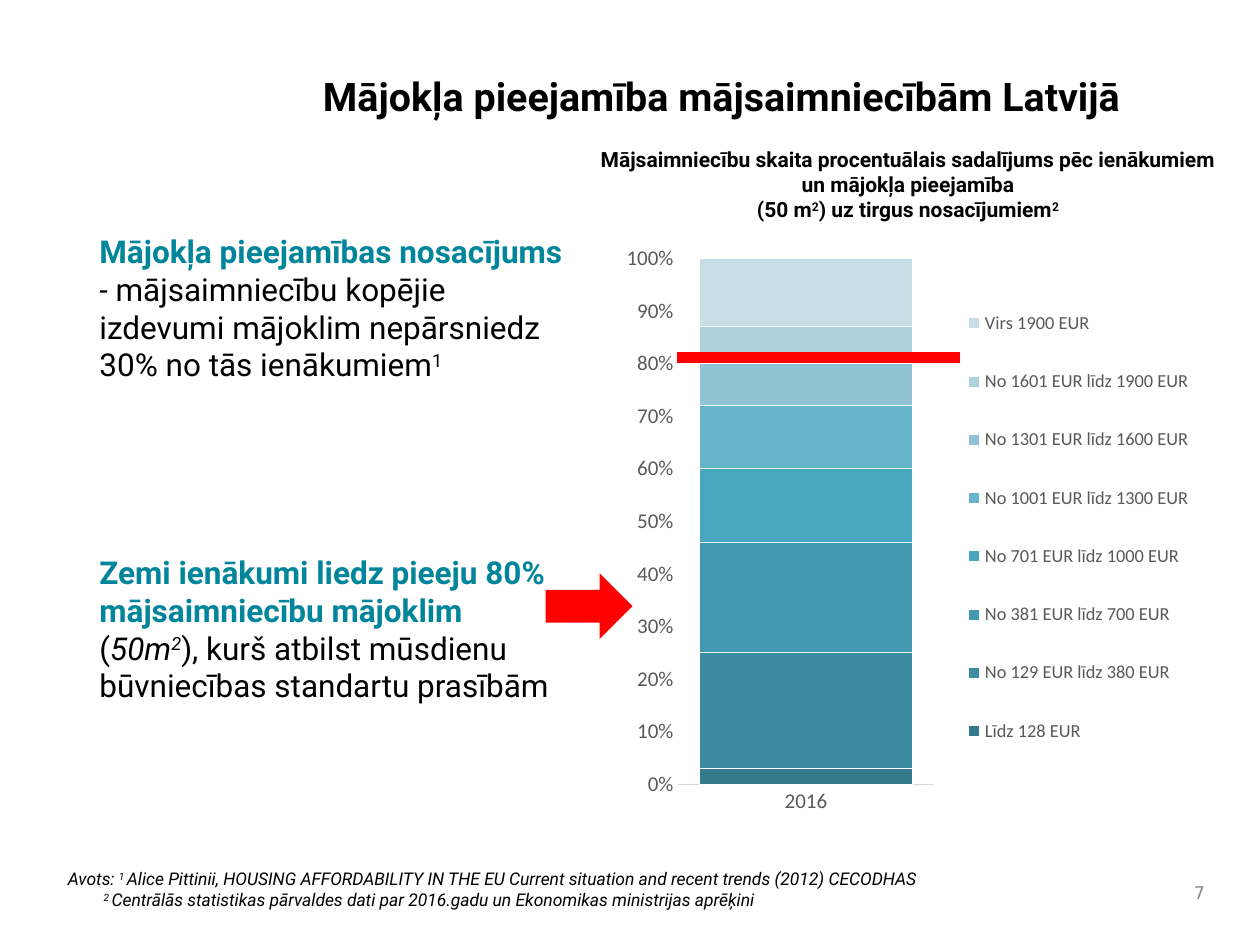
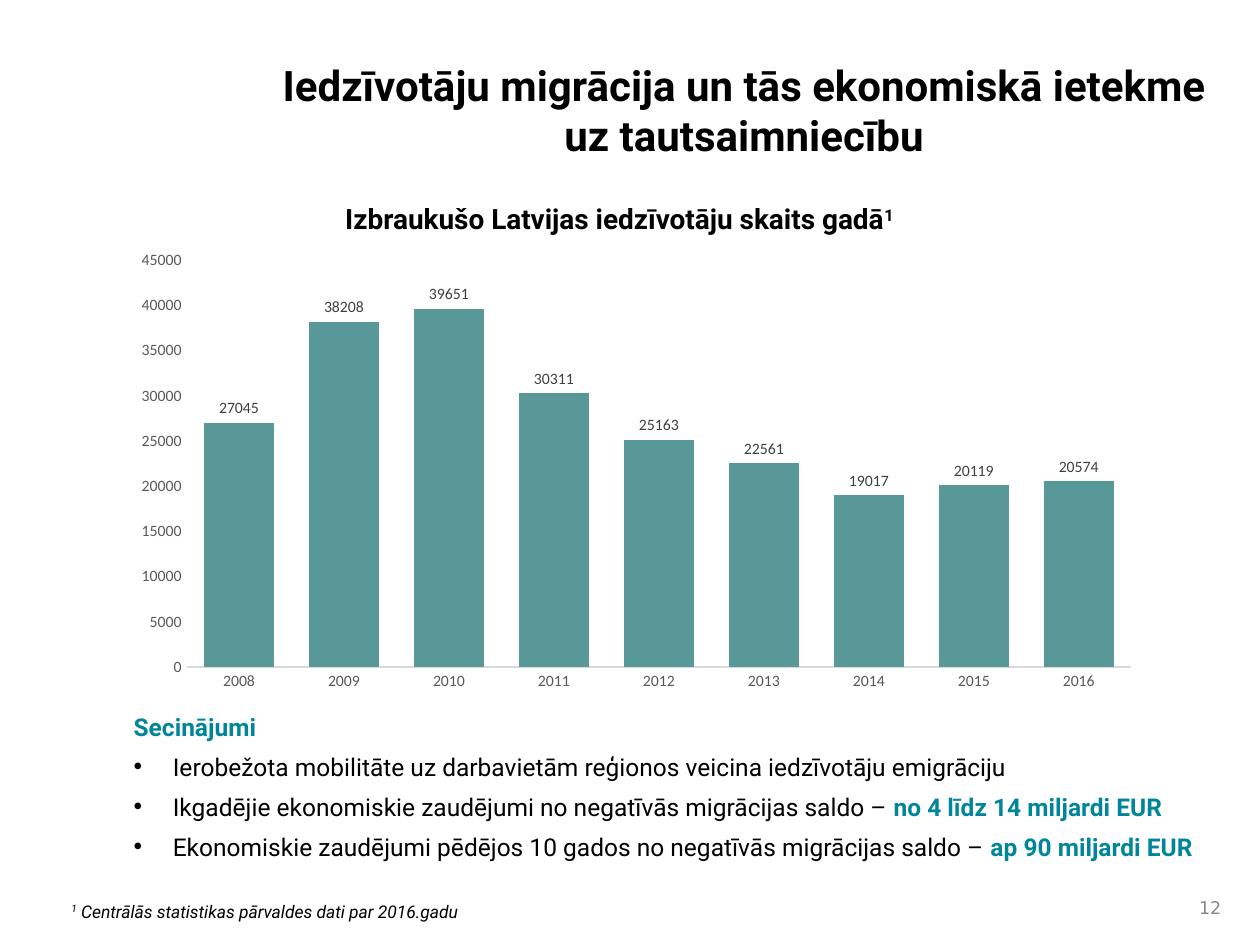
from dataclasses import dataclass

from lxml import etree
from pptx import Presentation
from pptx import util as u
from pptx.chart.data import CategoryChartData
from pptx.dml.color import RGBColor
from pptx.enum import chart as charts, shapes, text
from pptx.oxml.ns import qn


@dataclass(frozen=True)
class Theme:
    """Colours, fonts and type sizes shared by the slides."""
    ink: str = "000000"
    accent: str = "00859B"
    alert: str = "FF0000"
    paper: str = "FFFFFF"
    muted: str = "898989"
    axis_text: str = "595959"
    axis_line: str = "D9D9D9"
    label: str = "404040"
    column: str = "589898"
    income: tuple = ("357A8C", "3C8BA0", "4399B0", "48A6BF",
                     "68B4CB", "92C3D5", "AED1DE", "C7DEE7")
    font: str = "Roboto"
    chart_font: str = "Calibri"
    number_font: str = "DejaVu Sans"
    note_size: float = 10
    body_size: float = 18
    list_size: float = 14


@dataclass(frozen=True)
class Box:
    """A rectangle in centimetres."""
    left: float
    top: float
    width: float
    height: float

    def inset(self, left, top, width, height):
        """Return a box placed relative to this one."""
        return Box(self.left + left, self.top + top, width, height)

    def lengths(self):
        """Return the four measures as slide lengths."""
        return [u.Cm(n) for n in (self.left, self.top, self.width, self.height)]


THEME = Theme()
ALIGN = text.PP_ALIGN
STRONG = dict(bold=True, color=THEME.accent)
RAISED = dict(raised=True)


def rgb(color):
    """Turn a hex string into a colour."""
    return RGBColor.from_string(color)


def style_font(font, size, color, name):
    """Set the size, colour and face of a font."""
    font.size, font.name = u.Pt(size), name
    font.color.rgb = rgb(color)


def add_span(para, words, size=THEME.note_size, color=THEME.ink, name=THEME.font,
             bold=False, italic=False, raised=False):
    """Add one formatted run to a paragraph."""
    span = para.add_run()
    span.text = words
    style_font(span.font, size, color, name)
    span.font.bold, span.font.italic = bold, italic
    if raised:
        span.font._element.set("baseline", "30000")


def add_para(frame, spans, align=ALIGN.LEFT, before=0, indent=0, bullet=None, **base):
    """Add a paragraph of plain strings and (string, format) pairs."""
    first = frame.paragraphs[0]
    para = frame.add_paragraph() if first.runs else first
    props = para._p.get_or_add_pPr()
    props.set("marL", str(u.Cm(indent)))
    props.set("indent", str(-u.Cm(indent) if bullet else 0))
    mark = etree.SubElement(props, qn("a:buChar" if bullet else "a:buNone"))
    if bullet:
        mark.set("char", bullet)
    para.alignment, para.space_before = align, u.Pt(before)
    for span in spans:
        words, extra = (span, {}) if isinstance(span, str) else span
        add_span(para, words, **{**base, **extra})


def prepare(shape, box, anchor=text.MSO_ANCHOR.TOP):
    """Move a text shape into a box and return its wrapped frame."""
    shape.left, shape.top, shape.width, shape.height = box.lengths()
    frame = shape.text_frame
    frame.word_wrap, frame.auto_size = True, text.MSO_AUTO_SIZE.NONE
    frame.vertical_anchor = anchor
    return frame


def add_frame(page, box, anchor=text.MSO_ANCHOR.TOP):
    """Add a text box and return its frame."""
    return prepare(page.shapes.add_textbox(*box.lengths()), box, anchor)


def start_page(deck, title, size, title_box, number, number_box):
    """Add a slide with its title and page number."""
    page = deck.slides.add_slide(deck.slide_layouts[1])
    add_para(prepare(page.shapes.title, title_box), [title],
             align=ALIGN.CENTER, size=size, bold=True)
    add_para(add_frame(page, number_box, text.MSO_ANCHOR.MIDDLE), [number],
             align=ALIGN.RIGHT, color=THEME.muted, name=THEME.number_font)
    return page


def add_bar_chart(page, box, kind, categories, series, size, gap, overlap):
    """Add a column chart with plain axes and return it."""
    data = CategoryChartData()
    data.categories = categories
    for name, values in series:
        data.add_series(name, values)
    chart = page.shapes.add_chart(kind, *box.lengths(), data).chart
    chart.has_title = chart.has_legend = False
    style_font(chart.font, size, THEME.axis_text, THEME.chart_font)
    for axis in (chart.category_axis, chart.value_axis):
        axis.has_major_gridlines = False
        axis.major_tick_mark = axis.minor_tick_mark = charts.XL_TICK_MARK.NONE
        style_font(axis.tick_labels.font, size, THEME.axis_text, THEME.chart_font)
    chart.category_axis.format.line.color.rgb = rgb(THEME.axis_line)
    chart.category_axis.format.line.width = u.Pt(0.75)
    chart.value_axis.format.line.fill.background()
    plot = chart.plots[0]
    plot.gap_width, plot.overlap, plot.vary_by_categories = gap, overlap, False
    return chart


def set_layout(parent, position, inner=False, **measures):
    """Fix a chart region at fractions of the chart area."""
    for old in parent.findall(qn("c:layout")):
        parent.remove(old)
    layout = etree.Element(qn("c:layout"))
    manual = etree.SubElement(layout, qn("c:manualLayout"))
    settings = {"layoutTarget": "inner"} if inner else {}
    settings |= {"xMode": "edge", "yMode": "edge", **measures}
    for name, value in settings.items():
        etree.SubElement(manual, qn(f"c:{name}")).set("val", str(value))
    parent.insert(position, layout)


def income_chart(page, box):
    """Draw the stacked income shares with their legend."""
    shares = [("Līdz 128 EUR", 3), ("No 129 EUR līdz 380 EUR", 22),
              ("No 381 EUR līdz 700 EUR", 21), ("No 701 EUR līdz 1000 EUR", 14),
              ("No 1001 EUR līdz 1300 EUR", 12), ("No 1301 EUR līdz 1600 EUR", 8),
              ("No 1601 EUR līdz 1900 EUR", 7), ("Virs 1900 EUR", 13)]
    chart = add_bar_chart(page, box, charts.XL_CHART_TYPE.COLUMN_STACKED_100, ["2016"],
                          [(name, [share]) for name, share in shares], 12, 20, 100)
    labels = chart.value_axis.tick_labels
    labels.number_format, labels.number_format_is_linked = "0%", False
    for series, color in zip(chart.plots[0].series, THEME.income):
        series.format.fill.solid()
        series.format.fill.fore_color.rgb = rgb(color)
        series.format.line.color.rgb = rgb(THEME.paper)
        series.format.line.width = u.Pt(0.75)
    chart.has_legend = True
    chart.legend.position = charts.XL_LEGEND_POSITION.RIGHT
    chart.legend.include_in_layout = False
    style_font(chart.legend.font, 10.5, THEME.axis_text, THEME.chart_font)
    set_layout(chart.element.xpath("c:chart/c:plotArea")[0], 0, inner=True,
               x=0.09, y=0.04, w=0.43, h=0.87)
    set_layout(chart.element.xpath("c:chart/c:legend")[0], 1,
               x=0.56, y=0.07, w=0.41, h=0.83)


def income_panel(page, box):
    """Place the heading, chart, threshold line and arrow."""
    heading = add_frame(page, box.inset(0.61, 0, 13.39, 2.51))
    look = dict(align=ALIGN.CENTER, size=12, bold=True)
    add_para(heading, ["Mājsaimniecību skaita procentuālais sadalījums pēc "
                       "ienākumiem un mājokļa pieejamība"], **look)
    add_para(heading, ["(50 m", ("2", RAISED), ") uz tirgus nosacījumiem",
                       ("2", RAISED)], **look)
    income_chart(page, box.inset(1.6, 1.9, 11.96, 12.19))

    left, top = u.Cm(box.left + 2.64), u.Cm(box.top + 4.39)
    threshold = page.shapes.add_connector(shapes.MSO_CONNECTOR.STRAIGHT,
                                          left, top, left + u.Cm(5.72), top)
    threshold.line.color.rgb = rgb(THEME.alert)
    threshold.line.width = u.Pt(6.5)
    etree.SubElement(threshold._element.spPr, qn("a:effectLst"))

    arrow = page.shapes.add_shape(shapes.MSO_SHAPE.RIGHT_ARROW,
                                  *box.inset(0, 8.74, 1.75, 1.32).lengths())
    arrow.shadow.inherit = False
    arrow.fill.solid()
    arrow.fill.fore_color.rgb = rgb(THEME.alert)
    arrow.line.fill.background()


def affordability_text(page, box):
    """Fill the body with the affordability condition and finding."""
    frame = prepare(page.placeholders[1], box)
    add_para(frame, [("Mājokļa pieejamības nosacījums ", STRONG),
                     ("- ", dict(italic=True)),
                     "mājsaimniecību kopējie izdevumi mājoklim nepārsniedz "
                     "30% no tās ienākumiem", ("1", RAISED)], size=THEME.body_size)
    add_para(frame, [("Zemi ienākumi liedz pieeju 80% mājsaimniecību mājoklim ", STRONG),
                     "(", ("50m", dict(italic=True)),
                     ("2", dict(italic=True, raised=True)),
                     "), kurš atbilst mūsdienu būvniecības standartu prasībām"],
             before=97, size=THEME.body_size)


def affordability_slide(deck):
    """Build the housing affordability slide."""
    page = start_page(deck, "Mājokļa pieejamība mājsaimniecībām Latvijā", 22.5,
                      Box(4.98, 1.32, 19.15, 1.9), "7", Box(23.7, 17.58, 0.84, 0.84))
    affordability_text(page, Box(1.75, 4.55, 9.91, 10.95))
    income_panel(page, Box(11, 2.82, 14, 14.1))
    sources = add_frame(page, Box(1.12, 17.37, 23.44, 1.12))
    add_para(sources, ["Avots: ", ("1 ", RAISED),
                       "Alice Pittinii, HOUSING AFFORDABILITY IN THE EU Current "
                       "situation and recent trends (2012) CECODHAS"], italic=True)
    add_para(sources, [("2 ", RAISED), "Centrālās statistikas pārvaldes dati par "
                       "2016.gadu un Ekonomikas ministrijas aprēķini"],
             indent=0.72, italic=True)


def emigration_panel(page, box):
    """Place the emigration heading above its column chart."""
    heading = add_frame(page, box.inset(4.27, 0, 15.88, 0.94))
    add_para(heading, ["Izbraukušo Latvijas iedzīvotāju skaits gadā", ("1", RAISED)],
             size=16, bold=True)
    leavers = [27045, 38208, 39651, 30311, 25163, 22561, 19017, 20119, 20574]
    chart = add_bar_chart(page, box.inset(0, 0.94, 20.78, 9.22),
                          charts.XL_CHART_TYPE.COLUMN_CLUSTERED,
                          [str(year) for year in range(2008, 2017)],
                          [("Series 1", leavers)], 9, 50, -27)
    plot = chart.plots[0]
    plot.series[0].format.fill.solid()
    plot.series[0].format.fill.fore_color.rgb = rgb(THEME.column)
    plot.has_data_labels = True
    labels = plot.data_labels
    labels.show_value, labels.position = True, charts.XL_LABEL_POSITION.OUTSIDE_END
    style_font(labels.font, 9, THEME.label, THEME.chart_font)


def conclusions(page, box):
    """Fill the body with the headed list of conclusions."""
    frame = prepare(page.placeholders[1], box)
    look = dict(align=ALIGN.JUSTIFY, size=THEME.list_size)
    add_para(frame, [("Secinājumi", STRONG)], **look)
    points = [
        ["Ierobežota mobilitāte uz darbavietām reģionos veicina iedzīvotāju emigrāciju"],
        ["Ikgadējie ekonomiskie zaudējumi no negatīvās migrācijas saldo – ",
         ("no 4 līdz 14 miljardi EUR", STRONG)],
        ["Ekonomiskie zaudējumi pēdējos 10 gados no negatīvās migrācijas saldo – ",
         ("ap 90 miljardi EUR", STRONG)]]
    for point in points:
        add_para(frame, point, before=6, indent=0.79, bullet="•", **look)


def migration_slide(deck):
    """Build the migration slide."""
    page = start_page(deck, "Iedzīvotāju migrācija un tās ekonomiskā ietekme "
                      "uz tautsaimniecību", 24, Box(5.13, 1.07, 19.74, 2.87),
                      "12", Box(23.52, 17.88, 1.35, 0.84))
    emigration_panel(page, Box(2.44, 3.94, 20.78, 10.16))
    conclusions(page, Box(2.44, 14.22, 22.43, 3.3))
    add_para(add_frame(page, Box(1.19, 18.03, 22.5, 0.69)),
             [("1", RAISED), " Centrālās statistikas pārvaldes dati par 2016.gadu"],
             italic=True)


def main():
    """Build and save the deck."""
    deck = Presentation()
    deck.slide_width, deck.slide_height = u.Cm(25.4), u.Cm(19.05)
    affordability_slide(deck)
    migration_slide(deck)
    deck.save("out.pptx")


if __name__ == "__main__":
    main()
